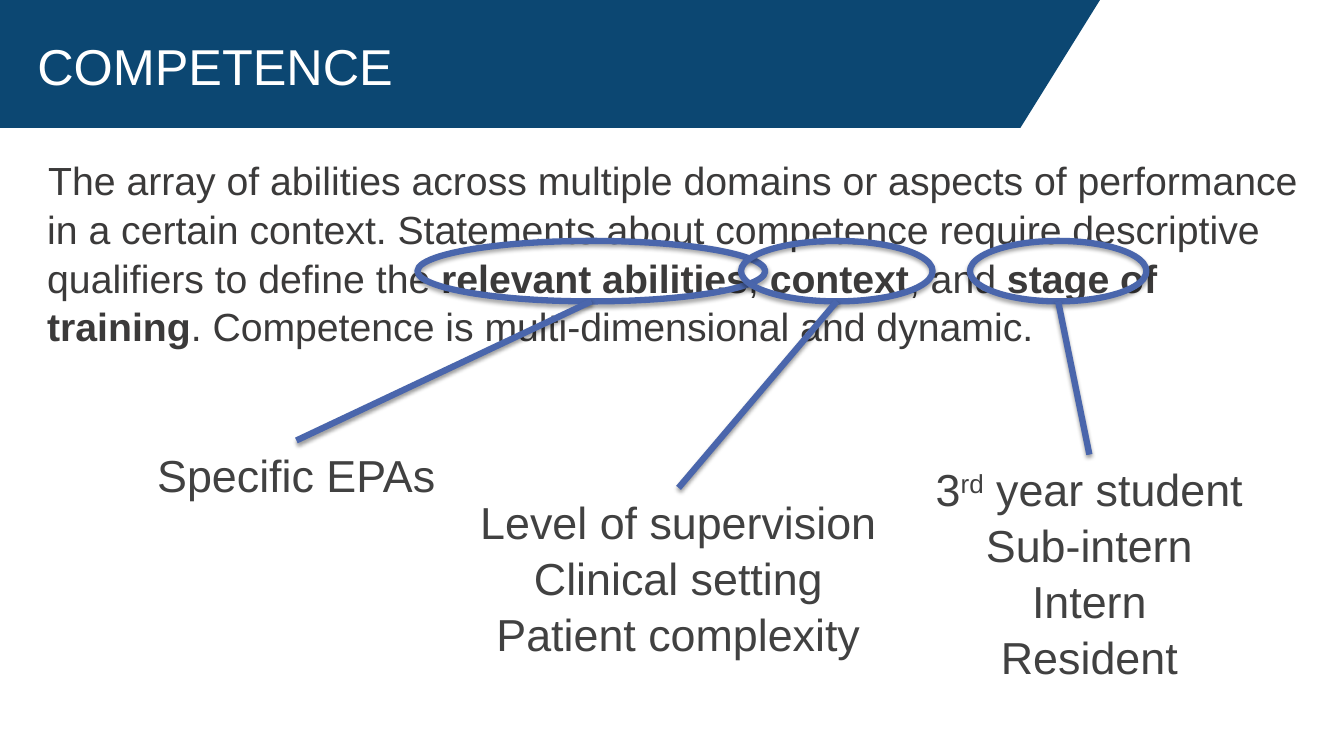
from lxml.etree import SubElement
from pptx import Presentation
from pptx.dml.color import RGBColor
from pptx.enum.shapes import MSO_CONNECTOR as Connector, MSO_SHAPE as Shape
from pptx.enum.text import MSO_ANCHOR as Anchor, MSO_AUTO_SIZE as AutoSize, PP_ALIGN as Align
from pptx.oxml.ns import qn
from pptx.util import Inches, Pt

FONT = "Arial"
NAVY, BLUE, WHITE = "0C4772", "4A66AC", "FFFFFF"
BODY_GREY, LABEL_GREY = "3B3A3A", "414141"
RING_TOP, RING_HEIGHT = 2.39, 0.6

DEFINITION = [
    ("The array of abilities across multiple domains or aspects of performance "
     "in a certain context. Statements about competence require descriptive "
     "qualifiers to define the ", ""),
    ("relevant abilities", "bold"),
    (", ", ""),
    ("context", "bold"),
    (", and ", ""),
    ("stage of training", "bold"),
    (". Competence is multi-dimensional and dynamic.", ""),
]

# Ring left and width, label box, label lines
CALLOUTS = [
    (4.14, 3.45, (0.17, 4.37, 5.54, 0.64), [[("Specific EPAs", "")]]),
    (7.35, 1.9, (4.2, 4.84, 5.06, 1.72),
     [[("Level of supervision", "")], [("Clinical setting", "")],
      [("Patient complexity", "")]]),
    (9.62, 1.75, (8.9, 4.51, 3.81, 2.26),
     [[("3", ""), ("rd", "superscript"), (" year student", "")],
      [("Sub-intern", "")], [("Intern", "")], [("Resident", "")]]),
]


def color(value):
    return RGBColor.from_string(value)


def add_shadow(shape, distance, opacity):
    """Give a shape a soft shadow straight below it."""
    effects = SubElement(shape._element.spPr, qn("a:effectLst"))
    shadow = SubElement(effects, qn("a:outerShdw"), blurRad=str(Pt(3)),
                        dist=str(Pt(distance)), dir="5400000", rotWithShape="0")
    black = SubElement(shadow, qn("a:srgbClr"), val="000000")
    SubElement(black, qn("a:alpha"), val=str(opacity * 1000))


def style_line(shape):
    shape.line.color.rgb = color(BLUE)
    shape.line.width = Pt(4.5)


def add_text(slide, box, paragraphs, size, text_color, insets=(0.05, 0.05),
             align=Align.LEFT, spacing=1.04):
    textbox = slide.shapes.add_textbox(*map(Inches, box))
    frame = textbox.text_frame
    frame.word_wrap = True
    frame.margin_left = frame.margin_right = Inches(insets[0])
    frame.margin_top = frame.margin_bottom = Inches(insets[1])
    for index, runs in enumerate(paragraphs):
        paragraph = frame.add_paragraph() if index else frame.paragraphs[0]
        paragraph.alignment = align
        paragraph.line_spacing = spacing
        for text, style in runs:
            run = paragraph.add_run()
            run.text = text
            run.font.name = FONT
            run.font.size = Pt(size)
            run.font.color.rgb = color(text_color)
            run.font.bold = style == "bold"
            if style == "superscript":
                run._r.get_or_add_rPr().set("baseline", "30000")
    return textbox


def add_banner(slide):
    builder = slide.shapes.build_freeform(Inches(10.91), 0)
    corners = [(0, 0), (0, 1.27), (10.12, 1.27)]
    builder.add_line_segments([(Inches(x), Inches(y)) for x, y in corners])
    banner = builder.convert_to_shape()
    banner.shadow.inherit = False
    banner.fill.solid()
    banner.fill.fore_color.rgb = color(NAVY)
    banner.line.fill.background()


def add_callout(slide, left, width, label_box, label_lines):
    """Ring a phrase and lead a line from it to its label."""
    ring = slide.shapes.add_shape(Shape.OVAL, Inches(left), Inches(RING_TOP),
                                  Inches(width), Inches(RING_HEIGHT))
    ring.fill.background()
    style_line(ring)
    add_shadow(ring, 1.8, 35)

    label = add_text(slide, label_box, label_lines, 32, LABEL_GREY, align=Align.CENTER)
    label.text_frame.auto_size = AutoSize.SHAPE_TO_FIT_TEXT

    leader = slide.shapes.add_connector(
        Connector.STRAIGHT, Inches(left + width / 2), Inches(RING_TOP + RING_HEIGHT),
        Inches(label_box[0] + label_box[2] / 2), Inches(label_box[1]))
    leader.end_connect(label, 0)
    style_line(leader)
    add_shadow(leader, 1.6, 38)


def main():
    presentation = Presentation()
    presentation.slide_width = Inches(13.33)
    presentation.slide_height = Inches(7.5)
    slide = presentation.slides.add_slide(presentation.slide_layouts[6])

    # Banner and title
    add_banner(slide)
    title = add_text(slide, (0.37, 0.21, 9.82, 0.98), [[("COMPETENCE", "")]],
                     36, WHITE, insets=(0, 0), spacing=0.8)
    title.text_frame.vertical_anchor = Anchor.MIDDLE

    # Definition
    body = add_text(slide, (0.37, 1.48, 12.7, 5.56), [DEFINITION],
                    28, BODY_GREY, insets=(0.1, 0.05))
    properties = body.text_frame.paragraphs[0]._p.get_or_add_pPr()
    properties.set("marL", "0")
    properties.set("indent", str(Inches(0.01)))

    # Ringed phrases with their labels
    for callout in CALLOUTS:
        add_callout(slide, *callout)

    presentation.save("out.pptx")


if __name__ == "__main__":
    main()
